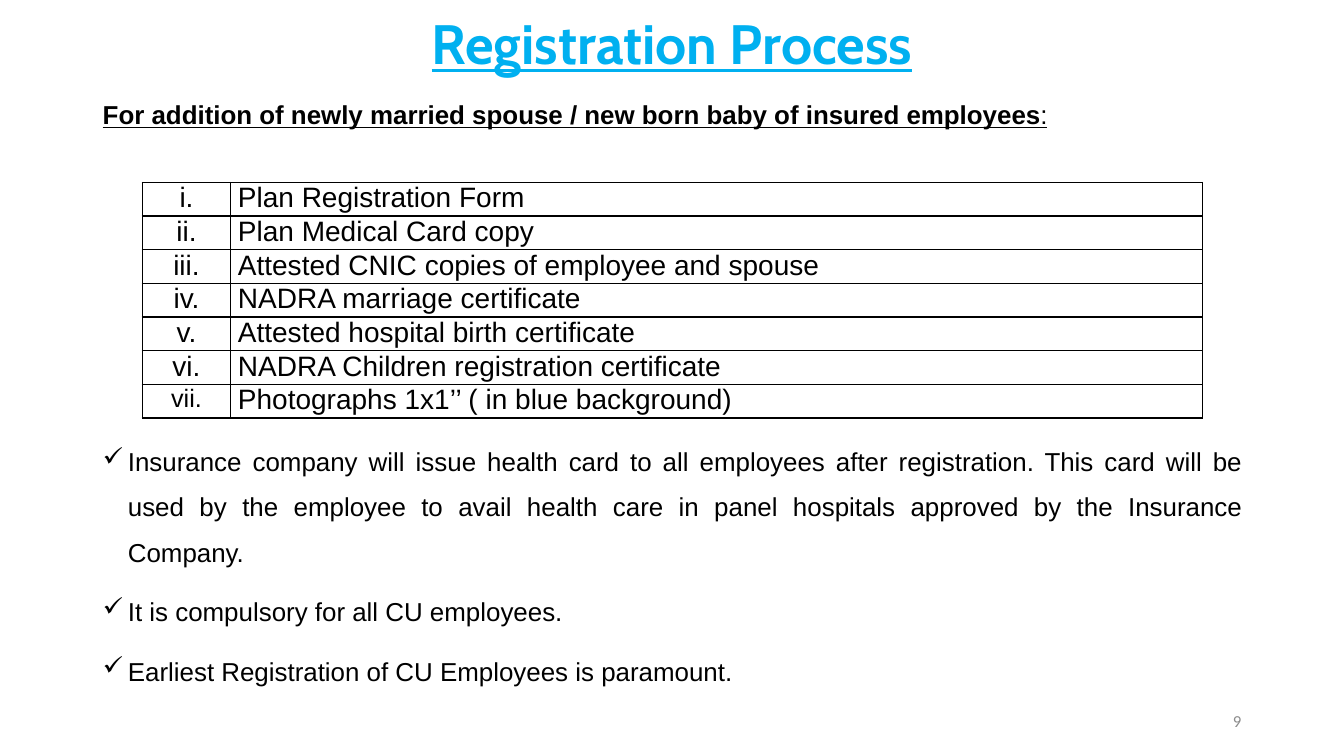
from dataclasses import dataclass

from lxml import etree
from pptx import Presentation
from pptx.dml.color import RGBColor
from pptx.enum.text import MSO_ANCHOR, PP_ALIGN
from pptx.oxml.ns import qn
from pptx.util import Inches, Pt

LEFT, CENTER, RIGHT, JUSTIFY = PP_ALIGN.LEFT, PP_ALIGN.CENTER, PP_ALIGN.RIGHT, PP_ALIGN.JUSTIFY
TOP, MIDDLE = MSO_ANCHOR.TOP, MSO_ANCHOR.MIDDLE

TITLE = "Registration Process"
HEADING = "For addition of newly married spouse / new born baby of insured employees"
DOCUMENTS = [
    ("i.", "Plan Registration Form"),
    ("ii.", "Plan Medical Card copy"),
    ("iii.", "Attested CNIC copies of employee and spouse"),
    ("iv.", "NADRA marriage certificate"),
    ("v.", "Attested hospital birth certificate"),
    ("vi.", "NADRA Children registration certificate"),
    ("vii.", "Photographs 1x1’’ ( in blue background)"),
]
NOTES = [
    "Insurance company will issue health card to all employees after registration. "
    "This card will be used by the employee to avail health care in panel hospitals "
    "approved by the Insurance Company.",
    "It is compulsory for all CU employees.",
    "Earliest Registration of CU Employees is paramount.",
]
PAGE = "9"


@dataclass(frozen=True)
class Theme:
    title: str = "00B0F0"
    ink: str = "000000"
    muted: str = "8C8C8C"
    title_font: str = "Cabin"
    body_font: str = "Arial"
    page_font: str = "Calibri"
    title_size: float = 39.6
    body_size: float = 18.5
    table_size: float = 20
    small_size: float = 18
    page_size: float = 12


T = Theme()
W, H = 13.33, 7.5
MARGIN = 0.92
CONTENT_W = W - 2 * MARGIN
TITLE_TOP, TITLE_H = 0.14, 0.65
HEADING_TOP = TITLE_TOP + TITLE_H
TABLE_LEFT, TABLE_TOP = 1.41, 1.81
COLUMNS = (0.88, 9.64)
ROW_H = 0.31
NOTES_TOP = 4.23
PAGE_W, PAGE_H, PAGE_TOP = 3, 0.4, 6.95
INDENT = 0.25
LINE_SPACING = 1.46


def add_text(p, text, font=T.body_font, size=T.body_size, color=T.ink,
             bold=False, underline=False, align=LEFT, spacing=None, before=0):
    p.alignment = align
    p.space_before = Pt(before)
    if spacing:
        p.line_spacing = spacing
    r = p.add_run()
    r.text = text
    r.font.name, r.font.size = font, Pt(size)
    r.font.bold, r.font.underline = bold, underline
    r.font.color.rgb = RGBColor.from_string(color)


def add_box(s, left, top, width, height, anchor=TOP):
    tf = s.shapes.add_textbox(*map(Inches, (left, top, width, height))).text_frame
    tf.word_wrap = True
    tf.vertical_anchor = anchor
    return tf


def add_check(p):
    pPr = p._p.get_or_add_pPr()
    pPr.set("marL", str(Inches(INDENT)))
    pPr.set("indent", str(-Inches(INDENT)))
    etree.SubElement(pPr, qn("a:buFont"), typeface="Wingdings")
    etree.SubElement(pPr, qn("a:buChar"), char="ü")


def add_borders(cell):
    tcPr = cell._tc.get_or_add_tcPr()
    for side in ("lnL", "lnR", "lnT", "lnB"):
        ln = etree.SubElement(tcPr, qn(f"a:{side}"), w=str(Pt(1)))
        fill = etree.SubElement(ln, qn("a:solidFill"))
        etree.SubElement(fill, qn("a:srgbClr"), val=T.ink)


def add_documents(s):
    table = s.shapes.add_table(
        len(DOCUMENTS), len(COLUMNS), Inches(TABLE_LEFT), Inches(TABLE_TOP),
        Inches(sum(COLUMNS)), Inches(ROW_H * len(DOCUMENTS))).table
    table.first_row = table.horz_banding = False
    for column, width in zip(table.columns, COLUMNS):
        column.width = Inches(width)
    for i, document in enumerate(DOCUMENTS):
        for j, text in enumerate(document):
            cell = table.cell(i, j)
            cell.margin_left = cell.margin_right = Inches(0.07)
            cell.margin_top = cell.margin_bottom = 0
            add_borders(cell)
            cell.fill.background()
            small = j == 0 and i == len(DOCUMENTS) - 1
            add_text(cell.text_frame.paragraphs[0], text,
                     size=T.small_size if small else T.table_size,
                     align=JUSTIFY if j else CENTER)


def main():
    prs = Presentation()
    prs.slide_width, prs.slide_height = Inches(W), Inches(H)
    s = prs.slides.add_slide(prs.slide_layouts[6])

    tf = add_box(s, MARGIN, TITLE_TOP, CONTENT_W, TITLE_H, MIDDLE)
    add_text(tf.paragraphs[0], TITLE, font=T.title_font, size=T.title_size,
             color=T.title, bold=True, underline=True, align=CENTER, spacing=0.9)

    tf = add_box(s, MARGIN, HEADING_TOP, CONTENT_W, TABLE_TOP - HEADING_TOP)
    for text, bold in ((HEADING, True), (":", False)):
        add_text(tf.paragraphs[0], text, bold=bold, underline=True,
                 align=JUSTIFY, spacing=LINE_SPACING)

    add_documents(s)

    tf = add_box(s, MARGIN, NOTES_TOP, CONTENT_W, PAGE_TOP - NOTES_TOP)
    for i, note in enumerate(NOTES):
        p = tf.add_paragraph() if i else tf.paragraphs[0]
        add_text(p, note, align=JUSTIFY, spacing=LINE_SPACING, before=10 if i else 0)
        add_check(p)

    tf = add_box(s, W - MARGIN - PAGE_W, PAGE_TOP, PAGE_W, PAGE_H, MIDDLE)
    add_text(tf.paragraphs[0], PAGE, font=T.page_font, size=T.page_size,
             color=T.muted, align=RIGHT)

    prs.save("out.pptx")


if __name__ == "__main__":
    main()
